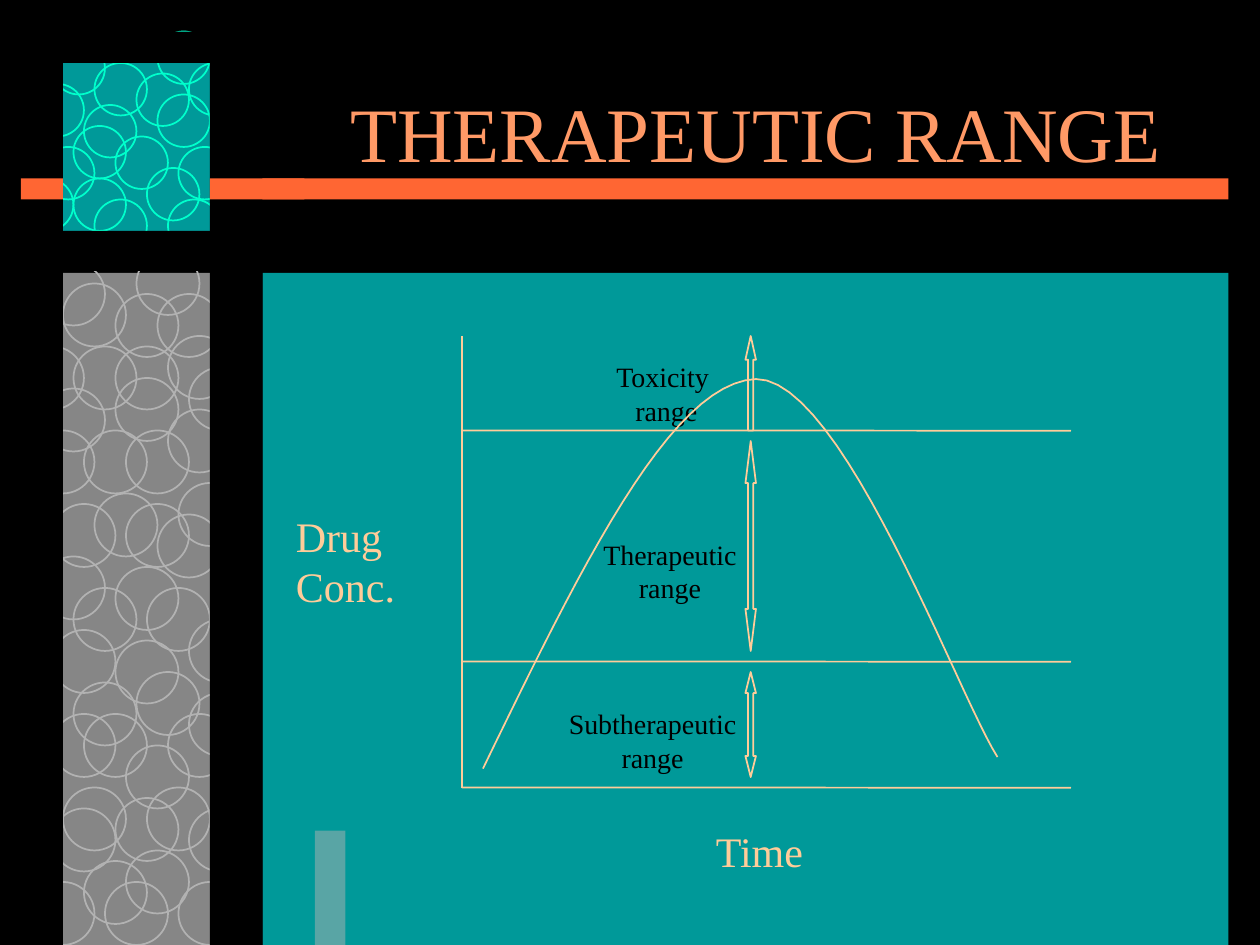
"""Draw the therapeutic range slide on a grid of twelfths of an inch."""
from pptx import Presentation
from pptx.util import Cm, Pt
from pptx.dml.color import RGBColor
from pptx.enum.shapes import MSO_CONNECTOR as Link, MSO_SHAPE as Form
from pptx.enum.text import MSO_ANCHOR as Anchor, PP_ALIGN as Align
from pptx.oxml.ns import qn
from lxml.etree import SubElement

BLACK, TEAL, ORANGE, GRAY = "000000", "009999", "FF6633", "868686"
SILVER, MINT, PEACH, CORAL = "B2B2B2", "00FFCC", "FFCC99", "FF9966"

RINGS = [
    (4, 25), (11, 28), (7, 33), (13, 24), (6, 27), (5, 60), (16, 32), (11, 36),
    (12, 41), (8, 41), (4, 37), (5, 48), (12, 48), (9, 47), (7, 56), (17, 46),
    (14, 56), (11, 61), (15, 49), (4, 53), (16, 39), (3, 41), (13, 64), (5, 68),
    (8, 68), (7, 65), (16, 68), (5, 77), (6, 75), (12, 71), (11, 76), (14, 75),
    (8, 82), (12, 81), (17, 84), (10, 84), (3, 84), (11, 54), (15, 28), (2, 33),
    (18, 59), (18, 35), (18, 66), (18, 77)]
DOTS = [
    (9, 6), (11, 13), (17, 14), (18, 6), (7, 17), (16, 19), (7, 12), (14, 16),
    (9, 19), (13, 7), (15, 9), (8, 10), (4, 14), (3, 8), (2, 17), (15, 3), (5, 4)]
MASKS = [
    (4, 3, 17, 3, BLACK), (1, 5, 5, 85, BLACK), (2, 17, 4, 2, ORANGE),
    (4, 22, 17, 3.8, BLACK), (20, 4, 5, 86, BLACK), (20, 17, 9, 2, ORANGE)]
AXES = [
    (44, 32, 44, 75), (44, 75, 102, 75.02), (44, 63, 102, 63.02), (44, 41, 102, 41.02)]
ARROWS = [
    (Form.UP_ARROW, 32, 9, 2.25), (Form.UP_DOWN_ARROW, 64, 10, 2),
    (Form.UP_DOWN_ARROW, 42, 20, 4)]
ZONES = [
    ("Subtherapeutic\nrange", 52.9, 66.7, 18.5), ("Therapeutic\nrange", 56.2, 50.6, 15.2),
    ("Toxicity \nrange", 57.4, 33.7, 12.1)]
CURVE = [
    [(46, 73.2), (55, 54.7), (63.8, 36.4), (72, 36.1)],
    [(72, 36.1), (80.2, 36), (91.2, 66.1), (95, 72.1)]]


def unit(n):
    return Cm(n * 2.54 / 12)


def tint(code):
    return RGBColor.from_string(code)


def bend(knots, steps=24):
    for i in range(1, steps + 1):
        t = i / steps
        parts = ((1 - t) ** 3, 3 * t * (1 - t) ** 2, 3 * t * t * (1 - t), t ** 3)
        yield tuple(unit(sum(w * k[axis] for w, k in zip(parts, knots))) for axis in (0, 1))


def write(frame, text, size=16, color=BLACK, align=Align.LEFT, font="Times New Roman"):
    for i, line in enumerate(text.split("\n")):
        para = frame.paragraphs[0] if i == 0 else frame.add_paragraph()
        para.alignment = align
        run = para.add_run()
        run.text = line
        run.font.name, run.font.size = font, Pt(size)
        run.font.color.rgb = tint(color)


class Board:
    def __init__(self, slide, width=1):
        self.slide, self.width = slide, Pt(width)
        self.shapes = slide.shapes

    def paint(self, shape, fill=None, line=None):
        shape.shadow.inherit = False
        if fill:
            shape.fill.solid()
            shape.fill.fore_color.rgb = tint(fill)
        else:
            shape.fill.background()
        if line:
            shape.line.color.rgb = tint(line)
            shape.line.width = self.width
        else:
            shape.line.fill.background()
        return shape

    def form(self, kind, x, y, w, h, fill=None, line=None):
        shape = self.shapes.add_shape(kind, *map(unit, (x, y, w, h)))
        return self.paint(shape, fill, line)

    def rect(self, x, y, w, h, fill, alpha=None):
        shape = self.form(Form.RECTANGLE, x, y, w, h, fill)
        if alpha:
            color = shape.fill._xPr.find(qn("a:solidFill"))[0]
            SubElement(color, qn("a:alpha")).set("val", str(alpha * 1000))

    def ring(self, x, y, size, line):
        self.form(Form.OVAL, x, y, size, size, line=line)

    def arrow(self, kind, y, h, head, shaft=0.5):
        shape = self.form(kind, 71, y, 1, h, TEAL, PEACH)
        guides = shape._element.spPr.find(qn("a:prstGeom")).find(qn("a:avLst"))
        for old in list(guides):
            guides.remove(old)
        for name, size in (("adj1", shaft), ("adj2", head)):
            guide = SubElement(guides, qn("a:gd"))
            guide.set("name", name)
            guide.set("fmla", f"val {int(size * 100000)}")

    def line(self, *ends):
        link = self.shapes.add_connector(Link.STRAIGHT, *map(unit, ends))
        link.line.color.rgb = tint(PEACH)
        link.line.width = self.width
        SubElement(link._element.spPr, qn("a:effectLst"))

    def curve(self, parts):
        pen = self.shapes.build_freeform(*map(unit, parts[0][0]))
        for knots in parts:
            pen.add_line_segments(bend(knots), close=False)
        self.paint(pen.convert_to_shape(), line=PEACH)

    def text(self, words, x, y, w, h, wrap=False, anchor=Anchor.TOP, **style):
        frame = self.shapes.add_textbox(*map(unit, (x, y, w, h))).text_frame
        frame.word_wrap, frame.vertical_anchor = wrap, anchor
        write(frame, words, **style)


def main():
    deck = Presentation()
    deck.slide_width, deck.slide_height = unit(120), unit(90)
    slide = deck.slides.add_slide(deck.slide_layouts[6])
    slide.background.fill.solid()
    slide.background.fill.fore_color.rgb = tint(BLACK)
    board = Board(slide)

    board.rect(25, 26, 92, 64, TEAL)
    board.rect(2, 17, 115, 2, ORANGE)
    board.rect(6, 6, 14, 16, TEAL)
    board.rect(6, 26, 14, 64, GRAY)
    for x, y in RINGS:
        board.ring(x, y, 6, SILVER)
    for x, y in DOTS:
        board.ring(x, y, 5, MINT)
    for mask in MASKS:
        board.rect(*mask)
    board.ring(11, 33, 6, SILVER)
    board.rect(30, 79.1, 2.9, 10.9, SILVER, alpha=50)

    board.text("THERAPEUTIC RANGE", 25, 5, 94, 15, wrap=True, anchor=Anchor.MIDDLE,
               size=44, color=CORAL, align=Align.CENTER)
    for ends in AXES:
        board.line(*ends)
    for arrow in ARROWS:
        board.arrow(*arrow)
    for words, x, y, w in ZONES:
        board.text(words, x, y, w, 7.7, align=Align.CENTER)
    board.curve(CURVE)
    board.text("Time", 67, 78, 10.8, 6, size=24, color=PEACH)
    board.text("Drug\nConc.", 27, 48, 11.9, 10.8, size=24, color=PEACH)
    deck.save("out.pptx")


if __name__ == "__main__":
    main()
